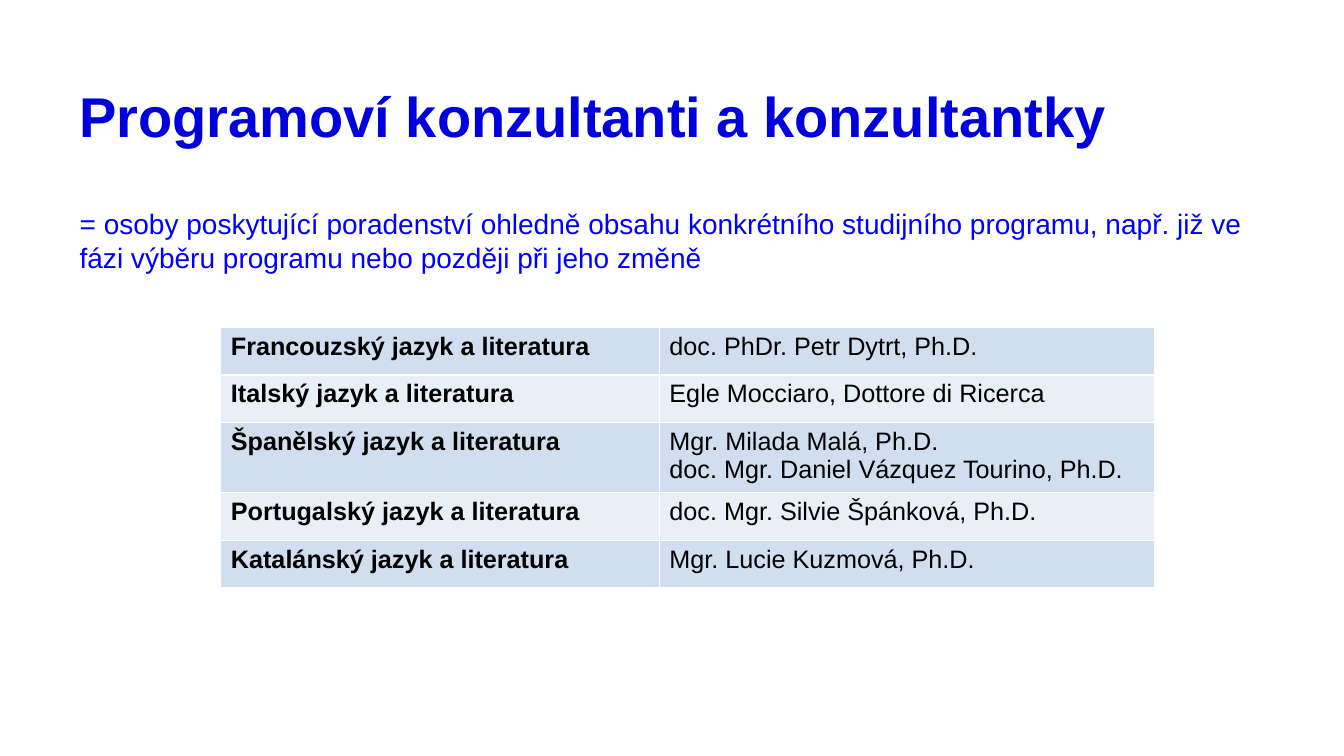
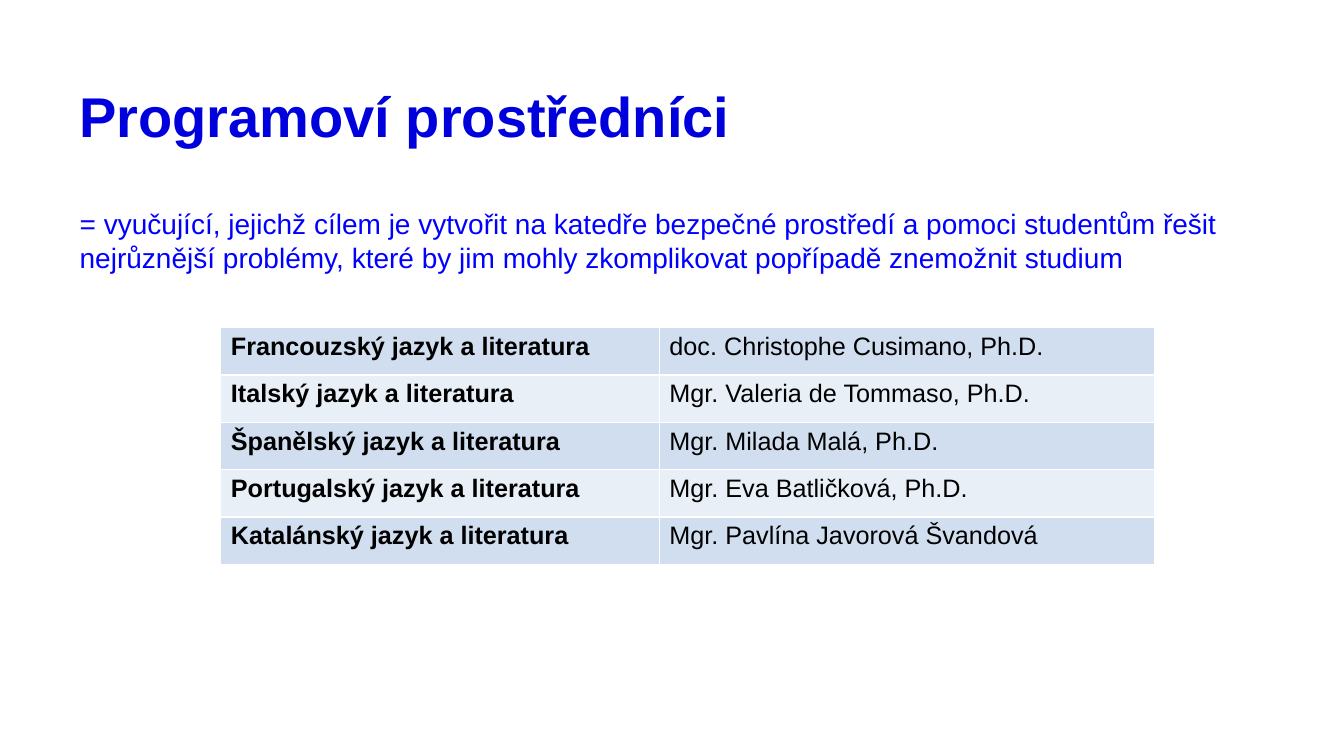
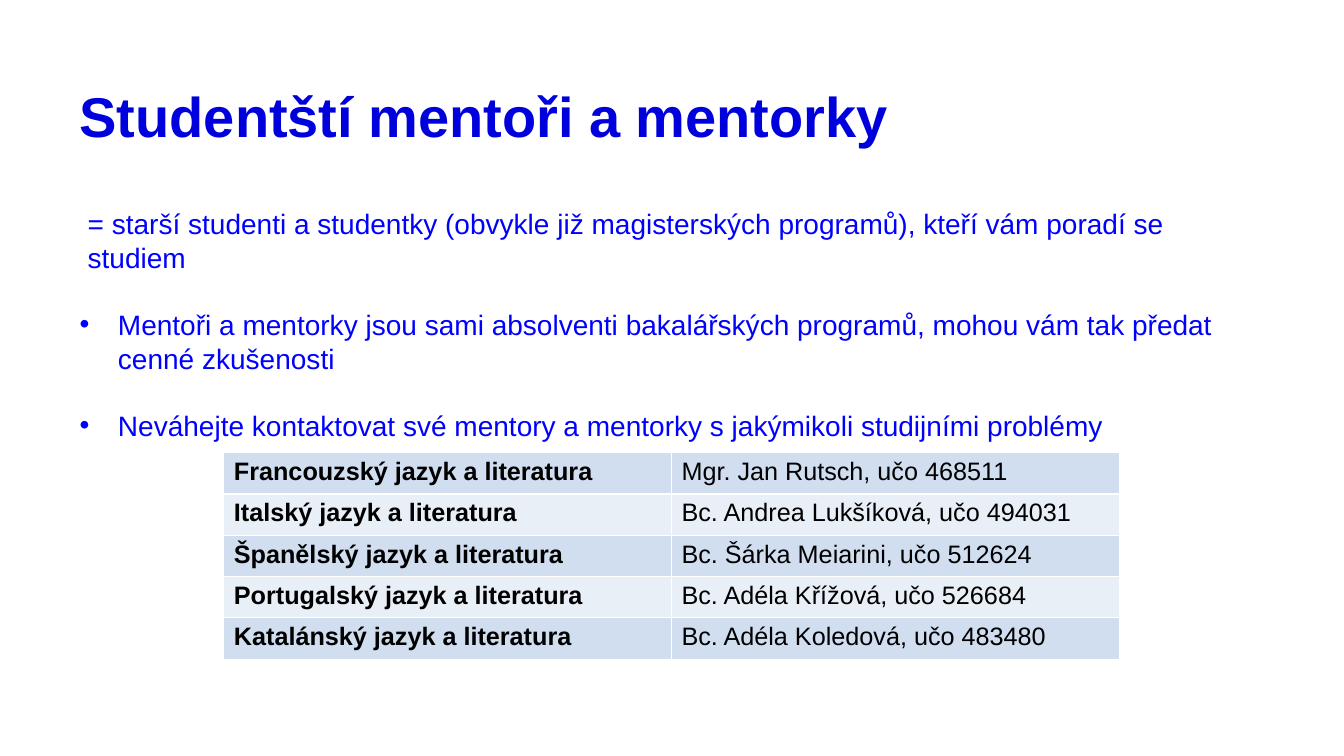
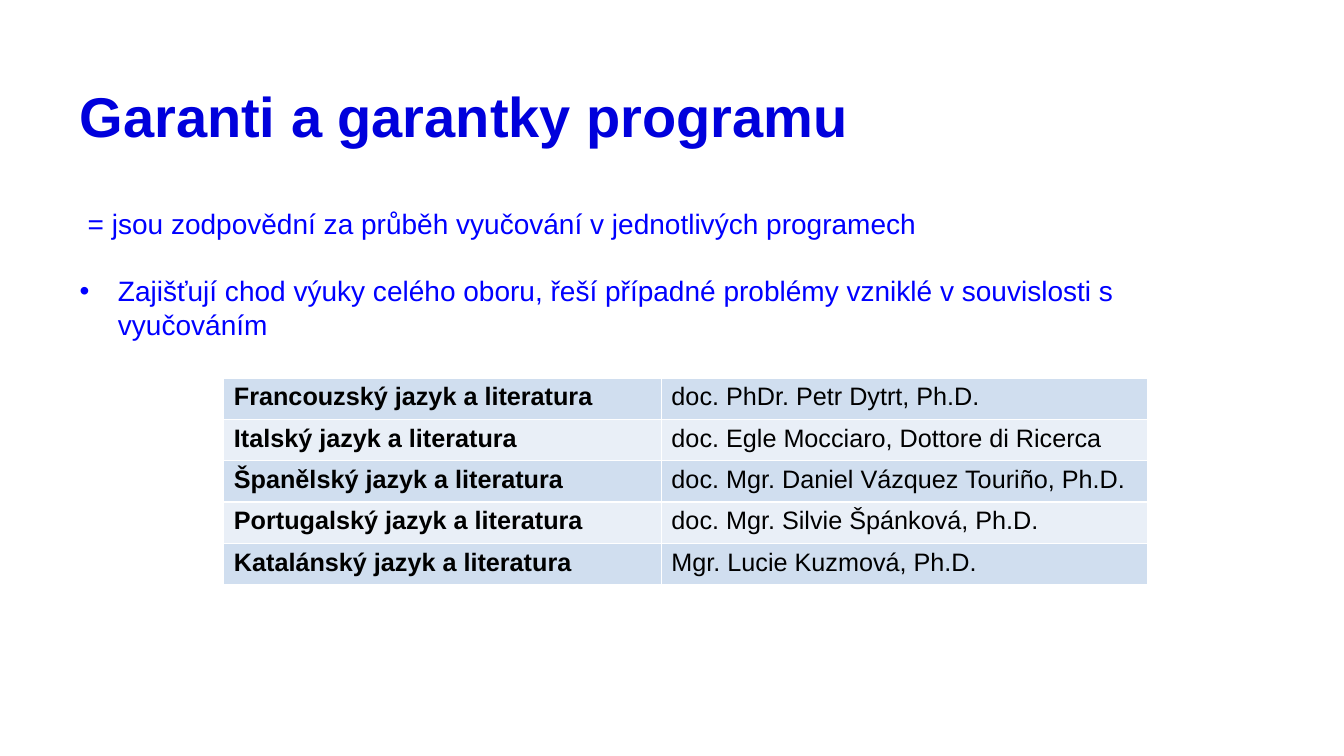
from dataclasses import dataclass

from lxml.etree import SubElement
from pptx import Presentation
from pptx.dml.color import RGBColor
from pptx.enum.text import MSO_ANCHOR
from pptx.oxml.ns import qn
from pptx.util import Inches, Pt

# Shared style
COLOURS = {
    "title": "0000DC",
    "body": "0000FF",
    "cell": "000000",
    "band_dark": "D0DEEF",
    "band_light": "E9EFF7",
    "border": "FFFFFF",
}
FONT = "Arial"
LEFT, WIDTH = 0.79, 11.76
BODY_LINE = 24
PROGRAMMES = [
    f"{language} jazyk a literatura"
    for language in ("Francouzský", "Italský", "Španělský", "Portugalský", "Katalánský")
]


@dataclass
class PeopleTable:
    left: float
    top: float
    columns: tuple[float, float]
    row_height: float
    people: list[str]  # one entry per programme, a line break between people


@dataclass
class ProgrammeSlide:
    title: str
    definition: str
    table: PeopleTable
    bullets: tuple[str, ...] = ()
    definition_indent: float = 0
    body_height: float = 4.33


SLIDES = [
    ProgrammeSlide(
        "Programoví konzultanti a konzultantky",
        "= osoby poskytující poradenství ohledně obsahu konkrétního studijního programu, "
        "např. již ve fázi výběru programu nebo později při jeho změně",
        PeopleTable(2.19, 3.25, (4.35, 4.91), 0.47, [
            "doc. PhDr. Petr Dytrt, Ph.D.",
            "Egle Mocciaro, Dottore di Ricerca",
            "Mgr. Milada Malá, Ph.D.\ndoc. Mgr. Daniel Vázquez Tourino, Ph.D.",
            "doc. Mgr. Silvie Špánková, Ph.D.",
            "Mgr. Lucie Kuzmová, Ph.D.",
        ]),
    ),
    ProgrammeSlide(
        "Programoví prostředníci",
        "= vyučující, jejichž cílem je vytvořit na katedře bezpečné prostředí a pomoci "
        "studentům řešit nejrůznější problémy, které by jim mohly zkomplikovat popřípadě "
        "znemožnit studium",
        PeopleTable(2.19, 3.25, (4.35, 4.91), 0.47, [
            "doc. Christophe Cusimano, Ph.D.",
            "Mgr. Valeria de Tommaso, Ph.D.",
            "Mgr. Milada Malá, Ph.D.",
            "Mgr. Eva Batličková, Ph.D.",
            "Mgr. Pavlína Javorová Švandová",
        ]),
    ),
    ProgrammeSlide(
        "Studentští mentoři a mentorky",
        "= starší studenti a studentky (obvykle již magisterských programů), "
        "kteří vám poradí se studiem",
        PeopleTable(2.22, 4.49, (4.44, 4.44), 0.41, [
            "Mgr. Jan Rutsch, učo 468511",
            "Bc. Andrea Lukšíková, učo 494031",
            "Bc. Šárka Meiarini, učo 512624",
            "Bc. Adéla Křížová, učo 526684",
            "Bc. Adéla Koledová, učo 483480",
        ]),
        bullets=(
            "Mentoři a mentorky jsou sami absolventi bakalářských programů, "
            "mohou vám tak předat cenné zkušenosti",
            "Neváhejte kontaktovat své mentory a mentorky s jakýmikoli studijními problémy",
        ),
        definition_indent=0.08,
        body_height=4.85,
    ),
    ProgrammeSlide(
        "Garanti a garantky programu",
        "= jsou zodpovědní za průběh vyučování v jednotlivých programech",
        PeopleTable(2.22, 3.75, (4.34, 4.82), 0.41, [
            "doc. PhDr. Petr Dytrt, Ph.D.",
            "doc. Egle Mocciaro, Dottore di Ricerca",
            "doc. Mgr. Daniel Vázquez Touriño, Ph.D.",
            "doc. Mgr. Silvie Špánková, Ph.D.",
            "Mgr. Lucie Kuzmová, Ph.D.",
        ]),
        bullets=(
            "Zajišťují chod výuky celého oboru, řeší případné problémy vzniklé "
            "v souvislosti s vyučováním",
        ),
        definition_indent=0.08,
    ),
]


def write(paragraph, text: str, *, size: float, colour: str, bold: bool = False,
          line: float | None = None, before: float | None = None,
          indent: float = 0, bullet: bool = False) -> None:
    """Fill one paragraph with formatted text."""
    properties = paragraph._p.get_or_add_pPr()
    if line:
        paragraph.line_spacing = Pt(line)
    if before:
        paragraph.space_before = Pt(before)
    if indent:
        properties.set("marL", str(Inches(indent)))
    if bullet:
        properties.set("indent", str(-Inches(indent)))
        bullet_colour = SubElement(properties, qn("a:buClr"))
        SubElement(bullet_colour, qn("a:srgbClr"), val=COLOURS[colour])
        SubElement(properties, qn("a:buFont"), typeface=FONT)
        SubElement(properties, qn("a:buChar"), char="•")
    run = paragraph.add_run()
    run.text = text
    run.font.name = FONT
    run.font.size = Pt(size)
    run.font.bold = bold
    run.font.color.rgb = RGBColor.from_string(COLOURS[colour])


def add_text_frame(slide, top: float, height: float):
    """Add a wrapping box without insets at the common left edge."""
    box = slide.shapes.add_textbox(Inches(LEFT), Inches(top), Inches(WIDTH), Inches(height))
    frame = box.text_frame
    frame.word_wrap = True
    frame.vertical_anchor = MSO_ANCHOR.TOP
    frame.margin_left = frame.margin_right = frame.margin_top = frame.margin_bottom = 0
    return frame


def set_borders(cell) -> None:
    """Draw thin lines on all four sides; they must precede the fill."""
    properties = cell._tc.get_or_add_tcPr()
    for side in ("lnL", "lnR", "lnT", "lnB"):
        border = SubElement(properties, qn(f"a:{side}"), w=str(Pt(1)))
        fill = SubElement(border, qn("a:solidFill"))
        SubElement(fill, qn("a:srgbClr"), val=COLOURS["border"])


def add_people_table(slide, spec: PeopleTable) -> None:
    rows = len(PROGRAMMES)
    table = slide.shapes.add_table(
        rows, 2, Inches(spec.left), Inches(spec.top),
        Inches(sum(spec.columns)), Inches(spec.row_height * rows),
    ).table
    table.first_row = table.horz_banding = False
    for column, width in zip(table.columns, spec.columns):
        column.width = Inches(width)
    for index, (programme, people) in enumerate(zip(PROGRAMMES, spec.people)):
        table.rows[index].height = Inches(spec.row_height)
        band = COLOURS["band_light" if index % 2 else "band_dark"]
        for column, content in enumerate((programme, people)):
            cell = table.cell(index, column)
            set_borders(cell)
            cell.fill.solid()
            cell.fill.fore_color.rgb = RGBColor.from_string(band)
            frame = cell.text_frame
            for number, entry in enumerate(content.split("\n")):
                paragraph = frame.add_paragraph() if number else frame.paragraphs[0]
                write(paragraph, entry, size=18, colour="cell", bold=column == 0)


def add_programme_slide(deck, content: ProgrammeSlide) -> None:
    slide = deck.slides.add_slide(deck.slide_layouts[6])
    # Title
    title = add_text_frame(slide, 0.79, 0.49)
    write(title.paragraphs[0], content.title, size=40, colour="title", bold=True, line=49)
    # Definition and bullets
    body = add_text_frame(slide, 2.05, content.body_height)
    write(body.paragraphs[0], content.definition, size=20, colour="body",
          line=BODY_LINE, indent=content.definition_indent)
    for point in content.bullets:
        write(body.add_paragraph(), point, size=20, colour="body", line=BODY_LINE,
              before=BODY_LINE, indent=0.38, bullet=True)
    # Programmes and people
    add_people_table(slide, content.table)


def main() -> None:
    deck = Presentation()
    deck.slide_width, deck.slide_height = Inches(13.33), Inches(7.5)
    for content in SLIDES:
        add_programme_slide(deck, content)
    deck.save("out.pptx")


if __name__ == "__main__":
    main()
